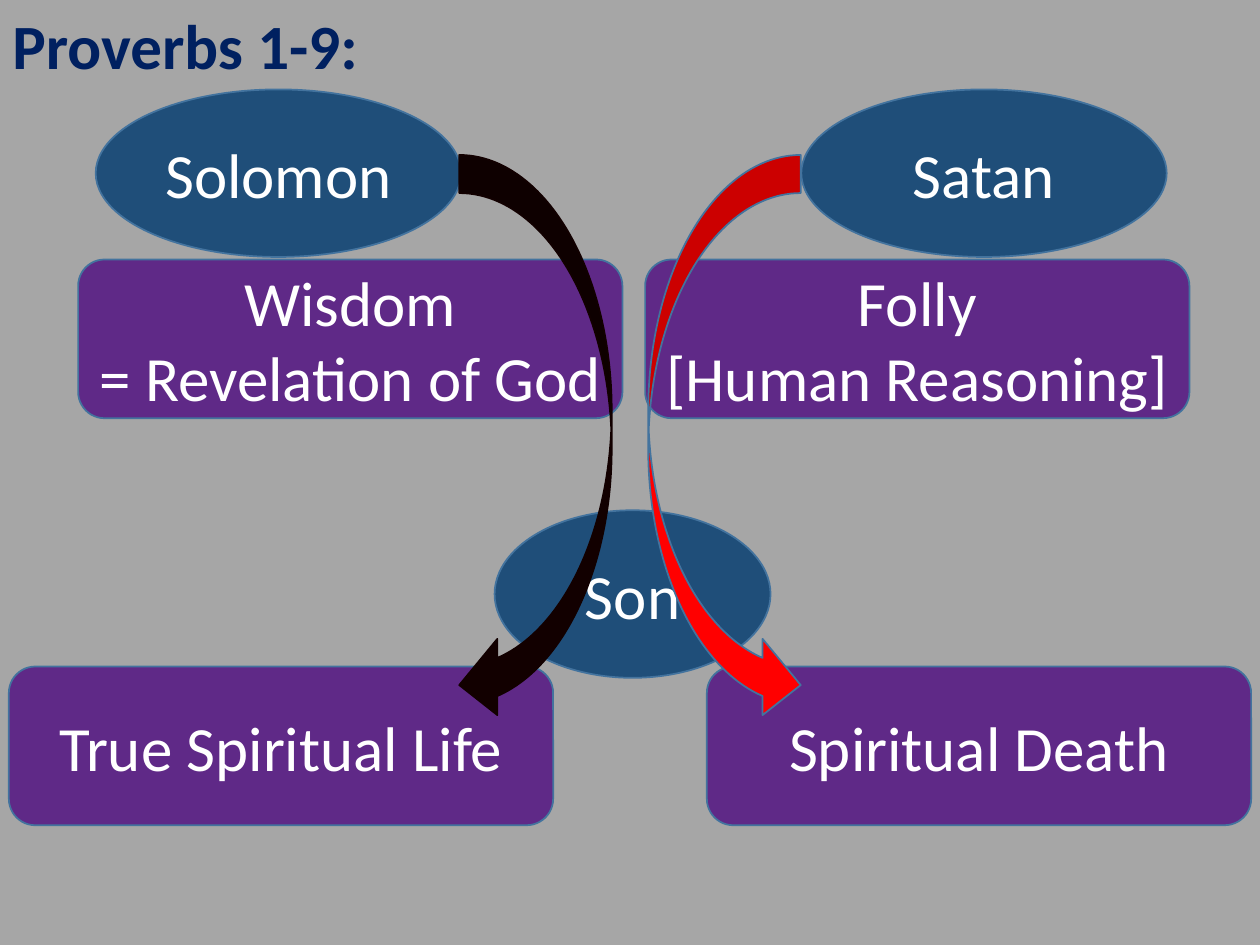
from pptx import Presentation, util as u
from pptx.dml.color import RGBColor
from pptx.enum import shapes, text

GRAY = RGBColor(0xA6, 0xA6, 0xA6)
NAVY = RGBColor(0x00, 0x20, 0x60)
BLUE = RGBColor(0x1F, 0x4E, 0x79)
EDGE = RGBColor(0x43, 0x73, 0x9E)
PURPLE = RGBColor(0x5F, 0x29, 0x87)
RED = RGBColor(0xFF, 0x00, 0x00)
BLACK = RGBColor(0x12, 0x00, 0x00)
WHITE = RGBColor(0xFF, 0xFF, 0xFF)

WIDE, HIGH = 10, 7.5
KIND = shapes.MSO_SHAPE
OVAL, BOX = KIND.OVAL, KIND.ROUNDED_RECTANGLE
TITLE = "Proverbs 1-9:"
ROWS = {"source": (0.71, 1.33), "message": (2.06, 1.26),
        "hearer": (4.05, 1.33), "outcome": (5.29, 1.26), "path": (1.23, 4.51)}
NODES = [
    (OVAL, BLUE, "hearer", 5.02, 2.19, ["Son"]),
    (OVAL, BLUE, "source", 7.81, 2.9, ["Satan"]),
    (OVAL, BLUE, "source", 2.21, 2.9, ["Solomon"]),
    (BOX, PURPLE, "message", 2.78, 4.32, ["Wisdom", "= Revelation of God"]),
    (BOX, PURPLE, "message", 7.28, 4.32, ["Folly", "[Human Reasoning]"]),
    (BOX, PURPLE, "outcome", 2.23, 4.32, ["True Spiritual Life"]),
    (BOX, PURPLE, "outcome", 7.77, 4.32, ["Spiritual Death"]),
    (KIND.CURVED_RIGHT_ARROW, RED, "path", 5.75, 1.21, []),
    (KIND.CURVED_LEFT_ARROW, BLACK, "path", 4.25, 1.21, []),
]


def write(frame, lines, color, bold, align):
    frame.text = "\n".join(lines)
    for para in frame.paragraphs:
        para.alignment = align
        look = {"name": "Calibri", "size": u.Pt(36), "bold": bold}
        for key, val in look.items():
            setattr(para.font, key, val)
        para.font.color.rgb = color


def node(slide, kind, fill, row, mid, width, lines):
    top, height = ROWS[row]
    area = [u.Inches(n) for n in (mid - width / 2, top, width, height)]
    shape = slide.shapes.add_shape(kind, *area)
    shape.shadow.inherit = False
    shape.fill.solid()
    shape.fill.fore_color.rgb = fill
    shape.line.color.rgb = BLACK if fill == BLACK else EDGE
    shape.line.width = u.Pt(1)
    if lines:
        frame = shape.text_frame
        frame.word_wrap = False
        frame.vertical_anchor = text.MSO_ANCHOR.MIDDLE
        write(frame, lines, WHITE, False, text.PP_ALIGN.CENTER)


def main():
    deck = Presentation()
    deck.slide_width, deck.slide_height = u.Inches(WIDE), u.Inches(HIGH)
    slide = deck.slides.add_slide(deck.slide_layouts[6])
    slide.background.fill.solid()
    slide.background.fill.fore_color.rgb = GRAY
    head = slide.shapes.add_textbox(0, 0, deck.slide_width, u.Inches(0.71))
    head.text_frame.word_wrap = True
    write(head.text_frame, [TITLE], NAVY, True, text.PP_ALIGN.LEFT)
    for item in NODES:
        node(slide, *item)
    deck.save("out.pptx")


if __name__ == "__main__":
    main()
